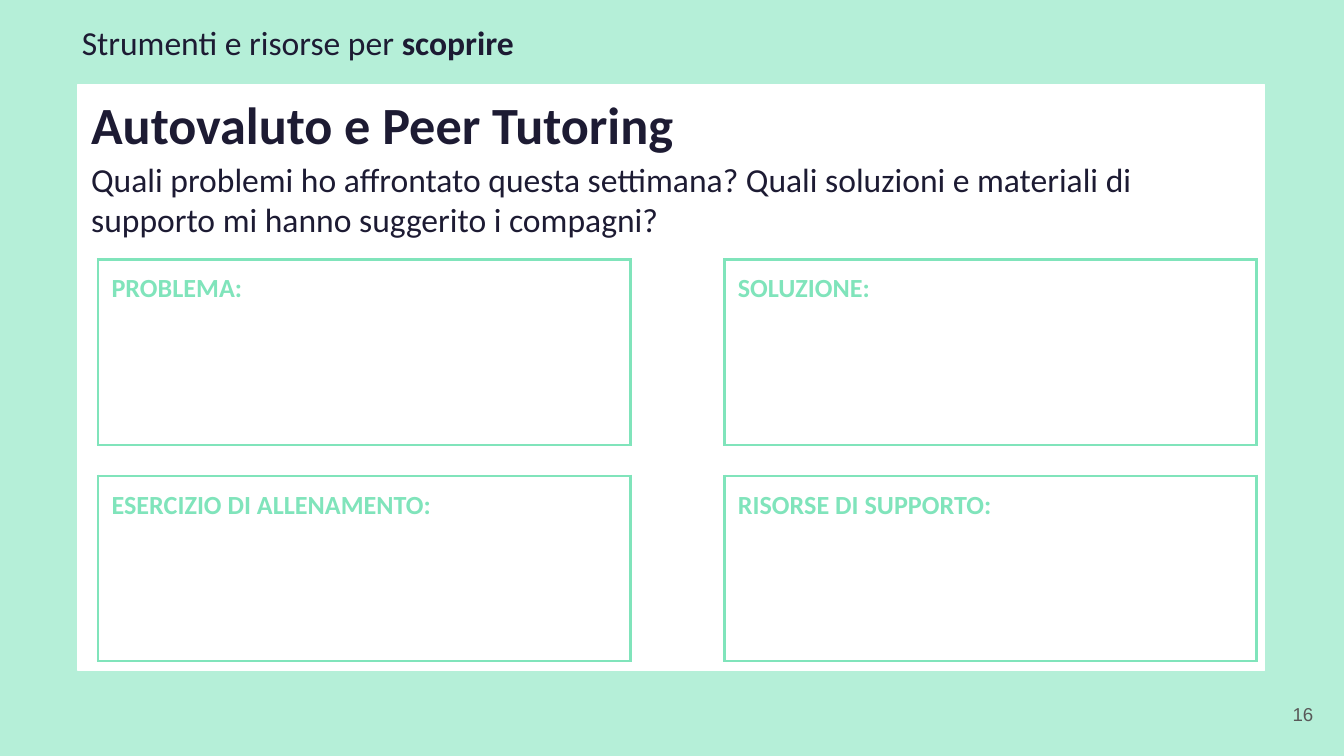
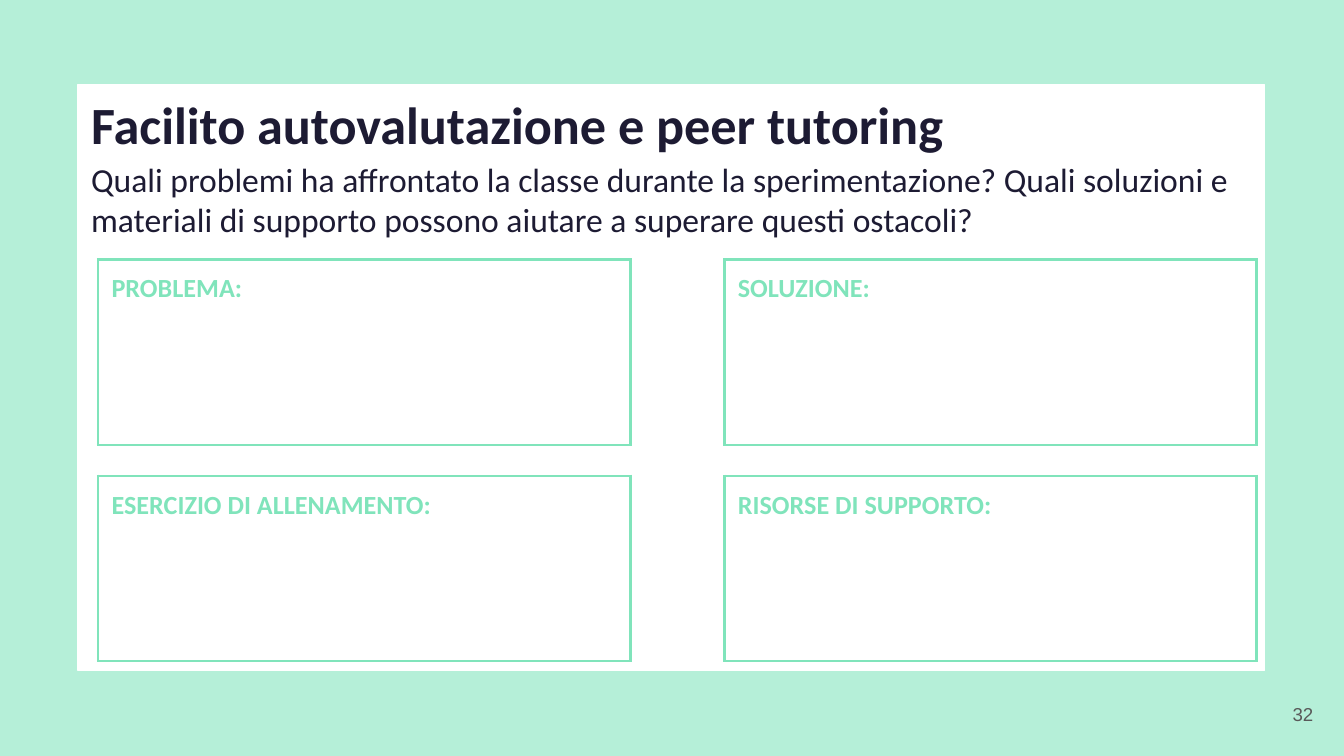
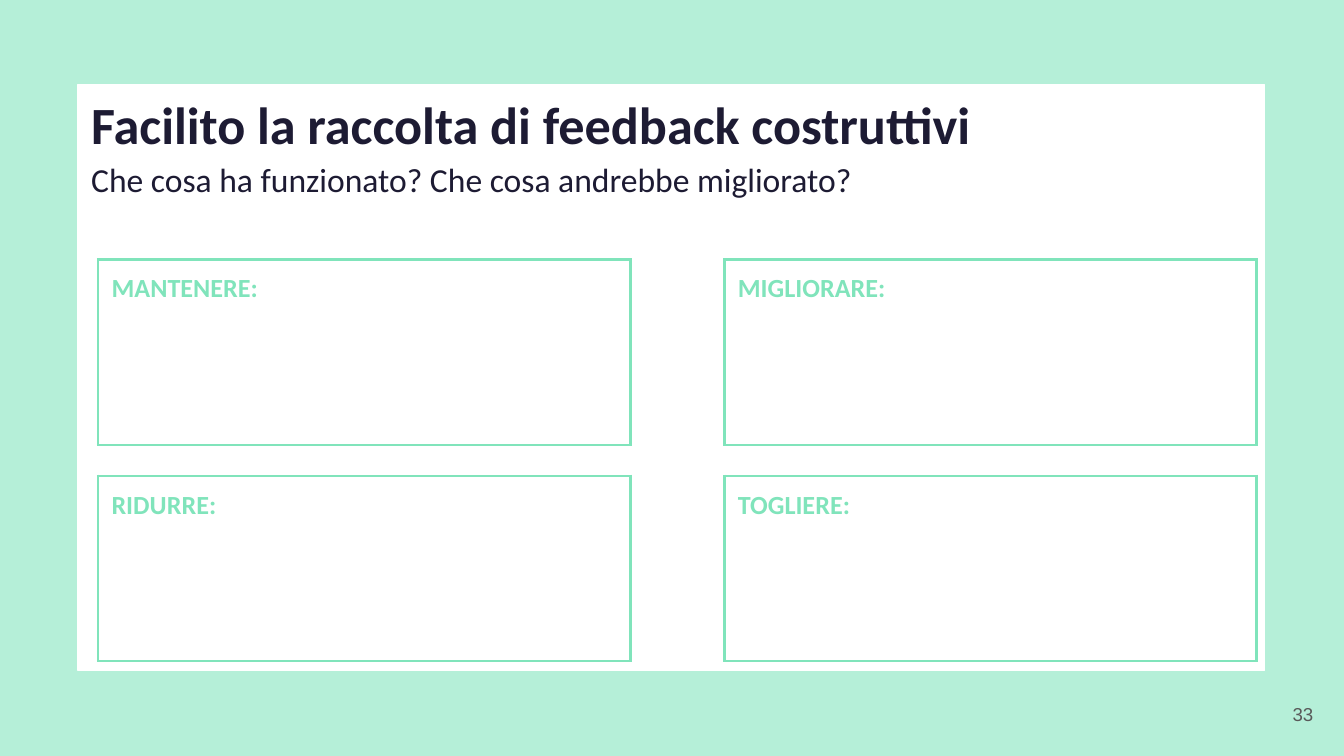
import dataclasses

import pptx
import pptx.dml.color
import pptx.enum.shapes
import pptx.enum.text
import pptx.oxml
import pptx.oxml.ns
import pptx.util

Inches = pptx.util.Inches
Pt = pptx.util.Pt
Anchor = pptx.enum.text.MSO_ANCHOR
Align = pptx.enum.text.PP_ALIGN


@dataclasses.dataclass(frozen=True)
class Theme:
    background: str = "B5EFD8"
    panel: str = "FFFFFF"
    ink: str = "1D1B33"
    accent: str = "80E4BB"
    muted: str = "595959"
    body_font: str = "Calibri"
    number_font: str = "Arial"
    title_size: int = 28
    question_size: int = 18
    label_size: int = 14
    number_size: int = 10
    panel_line: float = 0.75
    frame_line: float = 1.5


THEME = Theme()

TUTORING_LABELS = [
    "PROBLEMA:", "SOLUZIONE:",
    "ESERCIZIO DI ALLENAMENTO:", "RISORSE DI SUPPORTO:",
]

WORKSHEETS = [
    {
        "section": ["Strumenti e risorse per", " scoprire"],
        "title": "Autovaluto e Peer Tutoring",
        "question": "Quali problemi ho affrontato questa settimana? Quali soluzioni "
                    "e materiali di supporto mi hanno suggerito i compagni?",
        "labels": TUTORING_LABELS,
        "number": 16,
    },
    {
        "title": "Facilito autovalutazione e peer tutoring",
        "question": "Quali problemi ha affrontato la classe durante la sperimentazione? "
                    "Quali soluzioni e materiali di supporto possono aiutare a superare "
                    "questi ostacoli?",
        "labels": TUTORING_LABELS,
        "number": 32,
    },
    {
        "title": "Facilito la raccolta di feedback costruttivi",
        "question": "Che cosa ha funzionato? Che cosa andrebbe migliorato?",
        "labels": ["MANTENERE:", "MIGLIORARE:", "RIDURRE:", "TOGLIERE:"],
        "number": 33,
    },
]

PAGE_WIDTH = Inches(10)
PAGE_HEIGHT = PAGE_WIDTH * 9 // 16

# left, top, width, height in inches
PANEL = (0.58, 0.63, 8.83, 4.36)
SECTION = (0.51, 0.06, 8.81, 0.63)
TITLE = (0.58, 0.59, 9.32, 0.63)
QUESTION = (0.58, 1.08, 8.81, 0.67)
NUMBER = (9.27, 5.1, 0.6, 0.43)

GRID_LEFT, GRID_TOP = 0.73, 1.93
FRAME_WIDTH, FRAME_HEIGHT = 3.96, 1.38
COLUMN_GAP, ROW_GAP = 0.7, 0.23
GRID_COLUMNS = 2
INSET = 0.1


def colour(code):
    return pptx.dml.color.RGBColor.from_string(code)


def place(area):
    return [Inches(length) for length in area]


def set_margins(target):
    for side in ("left", "top", "right", "bottom"):
        setattr(target, f"margin_{side}", Inches(INSET))


def style_span(span, size, code, bold=False, font=THEME.body_font):
    span.font.name = font
    span.font.size = Pt(size)
    span.font.bold = bold
    span.font.color.rgb = colour(code)


def add_text(page, area, text, size, code=THEME.ink, bold=False, font=THEME.body_font):
    box = page.shapes.add_textbox(*place(area))
    frame = box.text_frame
    frame.word_wrap = True
    set_margins(frame)
    frame.text = text
    style_span(frame.paragraphs[0].runs[0], size, code, bold, font)
    return frame


def add_panel(page):
    panel = page.shapes.add_shape(
        pptx.enum.shapes.MSO_SHAPE.RECTANGLE, *place(PANEL))
    panel.shadow.inherit = False
    panel.fill.solid()
    panel.fill.fore_color.rgb = colour(THEME.panel)
    panel.line.color.rgb = colour(THEME.panel)
    panel.line.width = Pt(THEME.panel_line)


def set_borders(cell):
    properties = cell._tc.get_or_add_tcPr()
    for side in "LRTB":
        properties.append(pptx.oxml.parse_xml(
            f'<a:ln{side} {pptx.oxml.ns.nsdecls("a")} w="{Pt(THEME.frame_line)}">'
            f'<a:solidFill><a:srgbClr val="{THEME.accent}"/></a:solidFill>'
            f'</a:ln{side}>'))


def add_answer_frame(page, position, label):
    """Add the one-cell table at the given position of the grid."""
    row, column = divmod(position, GRID_COLUMNS)
    area = (GRID_LEFT + column * (FRAME_WIDTH + COLUMN_GAP),
            GRID_TOP + row * (FRAME_HEIGHT + ROW_GAP),
            FRAME_WIDTH, FRAME_HEIGHT)
    table = page.shapes.add_table(1, 1, *place(area)).table
    table.first_row = False
    table.horz_banding = False
    cell = table.cell(0, 0)
    set_borders(cell)
    cell.fill.background()
    set_margins(cell)
    cell.text_frame.text = label
    style_span(cell.text_frame.paragraphs[0].runs[0],
               THEME.label_size, THEME.accent, bold=True)


def add_section(page, plain, strong):
    para = add_text(page, SECTION, plain, THEME.question_size).paragraphs[0]
    span = para.add_run()
    span.text = strong
    style_span(span, THEME.question_size, THEME.ink, bold=True)


def add_number(page, number):
    frame = add_text(page, NUMBER, str(number), THEME.number_size,
                     THEME.muted, font=THEME.number_font)
    frame.vertical_anchor = Anchor.MIDDLE
    frame.paragraphs[0].alignment = Align.RIGHT


def add_worksheet(deck, worksheet):
    page = deck.slides.add_slide(deck.slide_layouts[6])
    page.background.fill.solid()
    page.background.fill.fore_color.rgb = colour(THEME.background)
    add_panel(page)
    add_text(page, QUESTION, worksheet["question"], THEME.question_size)
    for position, label in enumerate(worksheet["labels"]):
        add_answer_frame(page, position, label)
    add_text(page, TITLE, worksheet["title"], THEME.title_size, bold=True)
    add_number(page, worksheet["number"])
    if "section" in worksheet:
        add_section(page, *worksheet["section"])


def main():
    deck = pptx.Presentation()
    deck.slide_width = PAGE_WIDTH
    deck.slide_height = PAGE_HEIGHT
    for worksheet in WORKSHEETS:
        add_worksheet(deck, worksheet)
    deck.save("out.pptx")


if __name__ == "__main__":
    main()
